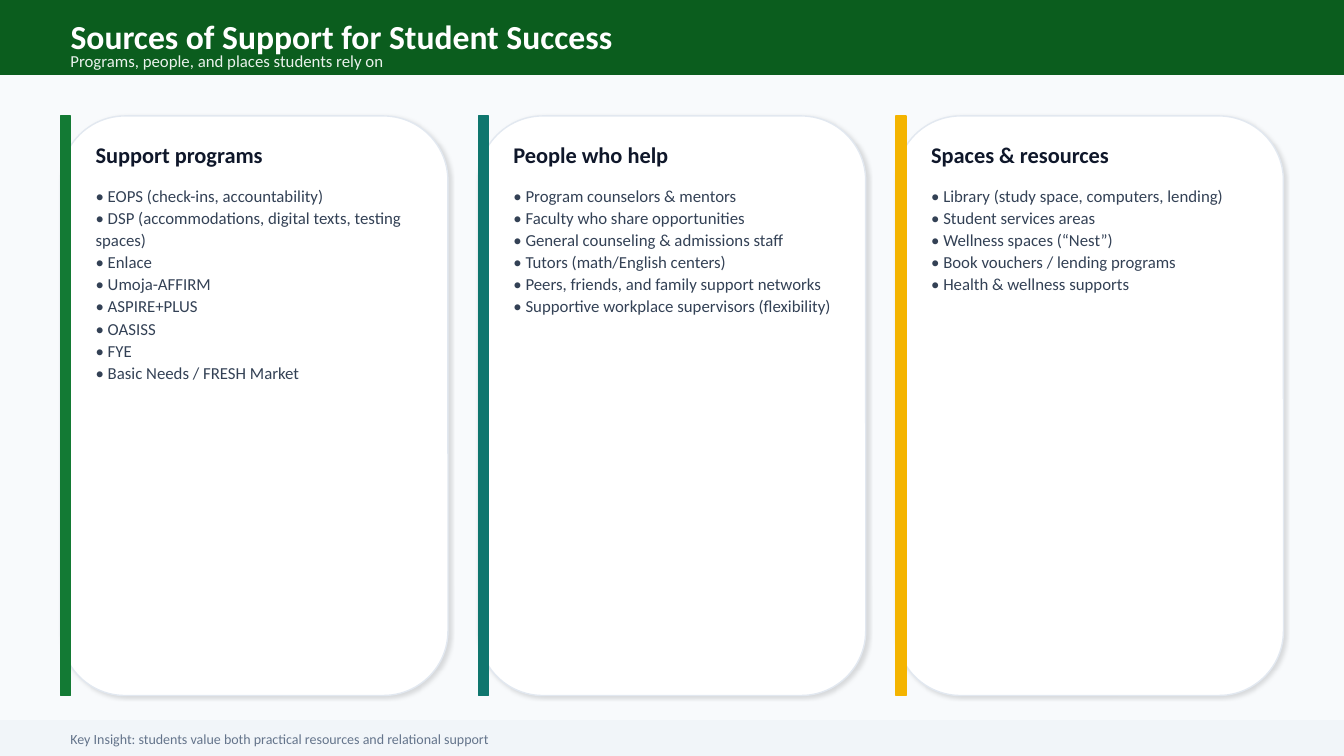
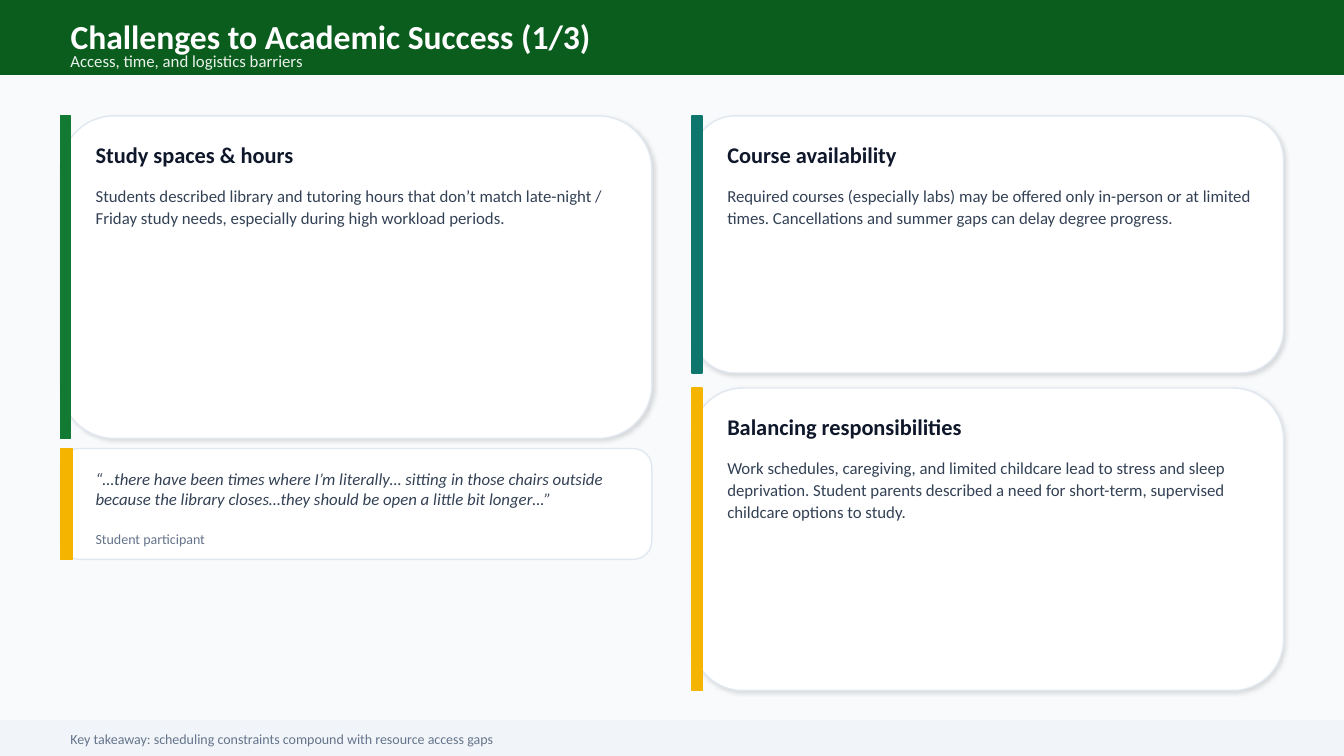
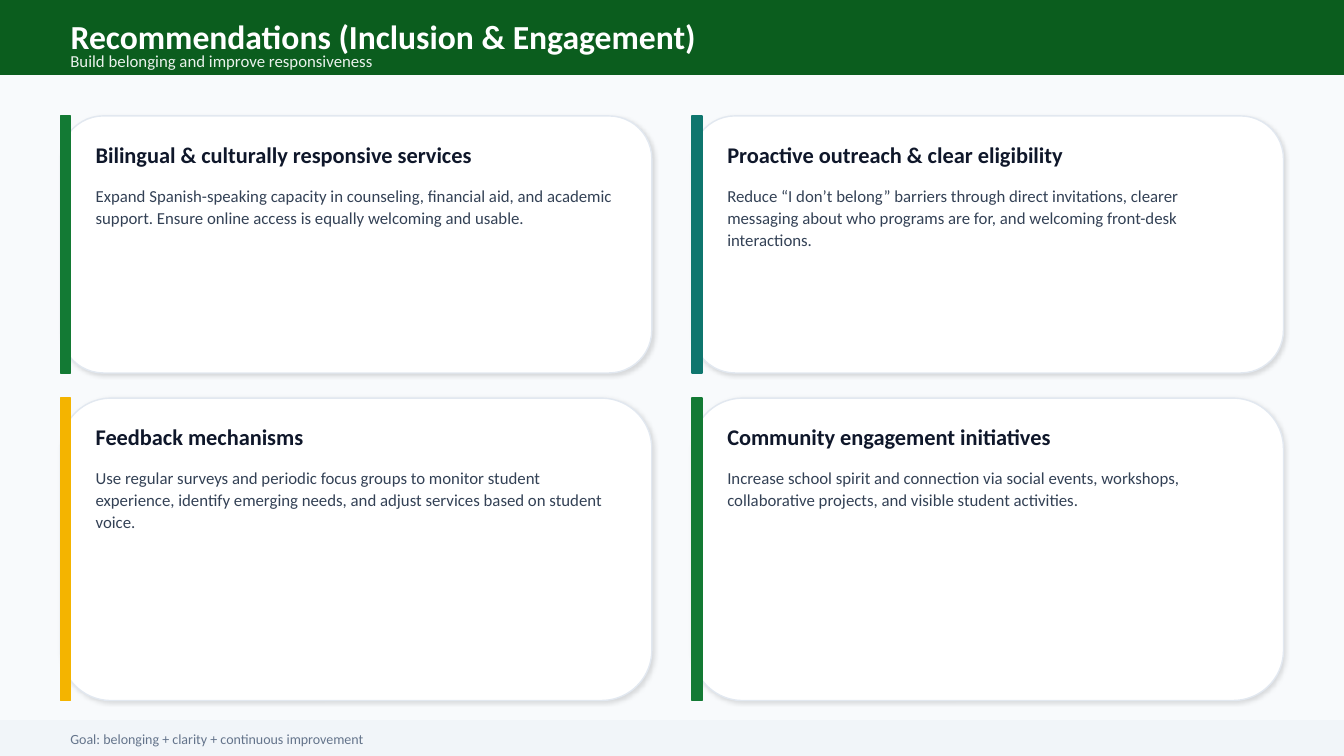
from lxml import etree
from pptx import Presentation
from pptx.dml.color import RGBColor
from pptx.enum.shapes import MSO_SHAPE as SHAPE
from pptx.enum.text import MSO_ANCHOR as ANCHOR, MSO_AUTO_SIZE as AUTO, PP_ALIGN as ALIGN
from pptx.oxml import parse_xml
from pptx.oxml.ns import nsdecls
from pptx.util import Inches, Pt

W, H, MARGIN = 13.33, 7.5, 0.6
HEADER_H, FOOTER_H, TOP = 0.75, 0.35, 1.15
GAPS = {2: 0.4, 3: 0.3}
FONT = "Calibri"
HEADER, PAGE, FOOTER = "0B5D1E", "F8FAFC", "F1F5F9"
GREEN, TEAL, GOLD = "137A34", "0F766E", "F4B400"
WHITE, BORDER, SUBTITLE = "FFFFFF", "E2E8F0", "EAF2EC"
INK, BODY, MUTED = "0F172A", "334155", "64748B"

SLIDES = [
    {
        "title": "Sources of Support for Student Success",
        "subtitle": "Programs, people, and places students rely on",
        "footer": "Key Insight: students value both practical resources and relational support",
        "columns": 3,
        "cards": [
            (0, TOP, 5.75, GREEN, "Support programs", [
                "• EOPS (check-ins, accountability)",
                "• DSP (accommodations, digital texts, testing spaces)",
                "• Enlace",
                "• Umoja-AFFIRM",
                "• ASPIRE+PLUS",
                "• OASISS",
                "• FYE",
                "• Basic Needs / FRESH Market"]),
            (1, TOP, 5.75, TEAL, "People who help", [
                "• Program counselors & mentors",
                "• Faculty who share opportunities",
                "• General counseling & admissions staff",
                "• Tutors (math/English centers)",
                "• Peers, friends, and family support networks",
                "• Supportive workplace supervisors (flexibility)"]),
            (2, TOP, 5.75, GOLD, "Spaces & resources", [
                "• Library (study space, computers, lending)",
                "• Student services areas",
                "• Wellness spaces (“Nest”)",
                "• Book vouchers / lending programs",
                "• Health & wellness supports"]),
        ],
        "quotes": [],
    },
    {
        "title": "Challenges to Academic Success (1/3)",
        "subtitle": "Access, time, and logistics barriers",
        "footer": "Key takeaway: scheduling constraints compound with resource access gaps",
        "columns": 2,
        "cards": [
            (0, TOP, 3.2, GREEN, "Study spaces & hours", [
                "Students described library and tutoring hours that don’t match late-night / "
                "Friday study needs, especially during high workload periods."]),
            (1, TOP, 2.55, TEAL, "Course availability", [
                "Required courses (especially labs) may be offered only in-person or at limited "
                "times. Cancellations and summer gaps can delay degree progress."]),
            (1, 3.85, 3, GOLD, "Balancing responsibilities", [
                "Work schedules, caregiving, and limited childcare lead to stress and sleep "
                "deprivation. Student parents described a need for short-term, supervised "
                "childcare options to study."]),
        ],
        "quotes": [
            (0, 4.45, 1.1, GOLD,
             "“…there have been times where I’m literally… sitting in those chairs outside "
             "because the library closes…they should be open a little bit longer…”",
             "Student participant"),
        ],
    },
    {
        "title": "Recommendations (Inclusion & Engagement)",
        "subtitle": "Build belonging and improve responsiveness",
        "footer": "Goal: belonging + clarity + continuous improvement",
        "columns": 2,
        "cards": [
            (0, TOP, 2.55, GREEN, "Bilingual & culturally responsive services", [
                "Expand Spanish-speaking capacity in counseling, financial aid, and academic "
                "support. Ensure online access is equally welcoming and usable."]),
            (1, TOP, 2.55, TEAL, "Proactive outreach & clear eligibility", [
                "Reduce “I don’t belong” barriers through direct invitations, clearer messaging "
                "about who programs are for, and welcoming front-desk interactions."]),
            (0, 3.95, 3, GOLD, "Feedback mechanisms", [
                "Use regular surveys and periodic focus groups to monitor student experience, "
                "identify emerging needs, and adjust services based on student voice."]),
            (1, 3.95, 3, GREEN, "Community engagement initiatives", [
                "Increase school spirit and connection via social events, workshops, "
                "collaborative projects, and visible student activities."]),
        ],
        "quotes": [],
    },
]


def rgb(color):
    return RGBColor.from_string(color)


def add_box(s, x, y, w, h, fill, line=None, kind=SHAPE.RECTANGLE):
    sp = s.shapes.add_shape(kind, Inches(x), Inches(y), Inches(w), Inches(h))
    sp.shadow.inherit = False
    sp.fill.solid()
    sp.fill.fore_color.rgb = rgb(fill)
    sp.line.color.rgb = rgb(line or fill)
    sp.line.width = Pt(1)
    return sp


def add_shadow(sp):
    effects = sp.element.spPr.find("{*}effectLst")
    effects.append(parse_xml(
        f'<a:outerShdw {nsdecls("a")} blurRad="{Pt(3)}" dist="{Pt(1.5)}" dir="2700000" '
        'algn="ctr" rotWithShape="0"><a:srgbClr val="000000">'
        '<a:alpha val="12000"/></a:srgbClr></a:outerShdw>'))


def write(sp, lines, size, color, bold=False, italic=False, anchor=ANCHOR.MIDDLE, spacing=None):
    tf = sp.text_frame
    tf.text = "\n".join(lines)
    tf.word_wrap = True
    tf.auto_size = AUTO.NONE
    tf.vertical_anchor = anchor
    for p in tf.paragraphs:
        p.alignment = ALIGN.LEFT
        if spacing:
            p.line_spacing = spacing
        for r in p.runs:
            r.font.name = FONT
            r.font.size = Pt(size)
            r.font.bold = bold
            r.font.italic = italic
            r.font.color.rgb = rgb(color)


def add_text(s, x, y, w, h, lines, size, color, **style):
    sp = s.shapes.add_textbox(Inches(x), Inches(y), Inches(w), Inches(h))
    write(sp, lines, size, color, **style)


def column(index, count):
    gap = GAPS[count]
    w = (W - 2 * MARGIN - gap * (count - 1)) / count
    return MARGIN + index * (w + gap), w


def add_frame(s, title, subtitle, footer):
    add_box(s, 0, 0, W, HEADER_H, HEADER)
    add_box(s, 0, HEADER_H, W, H - HEADER_H - FOOTER_H, PAGE)
    add_box(s, 0, H - FOOTER_H, W, FOOTER_H, FOOTER)
    sp = s.shapes.title
    s.shapes.element.append(sp.element)
    sp.left, sp.top = Inches(MARGIN), Inches(0.16)
    sp.width, sp.height = Inches(W - 2 * MARGIN), Inches(0.4)
    write(sp, [title], 24, WHITE, bold=True)
    add_text(s, MARGIN, 0.49, W - 2 * MARGIN, 0.22, [subtitle], 12, SUBTITLE)
    add_text(s, MARGIN, 7.22, W / 2, 0.22, [footer], 10, MUTED)


def add_card(s, count, index, y, h, accent, heading, lines):
    x, w = column(index, count)
    add_shadow(add_box(s, x, y, w, h, WHITE, BORDER, SHAPE.ROUNDED_RECTANGLE))
    add_box(s, x, y, 0.1, h, accent)
    add_text(s, x + 0.25, y + 0.18, w - 0.45, 0.4, [heading], 16, INK, bold=True)
    add_text(s, x + 0.25, y + 0.62, w - 0.45, h - 0.8, lines, 12, BODY,
             anchor=ANCHOR.TOP, spacing=1.1)


def add_quote(s, count, index, y, h, accent, quote, speaker):
    x, w = column(index, count)
    add_box(s, x, y, w, h, WHITE, BORDER, SHAPE.ROUNDED_RECTANGLE)
    add_box(s, x, y, 0.12, h, accent)
    add_text(s, x + 0.25, y + 0.15, w - 0.45, h - 0.45, [quote], 12, BODY,
             italic=True, anchor=ANCHOR.TOP)
    add_text(s, x + 0.25, y + h - 0.33, w - 0.45, 0.25, [speaker], 10, MUTED)


def main():
    prs = Presentation()
    prs.slide_width, prs.slide_height = Inches(W), Inches(H)
    for content in SLIDES:
        s = prs.slides.add_slide(prs.slide_layouts[5])
        add_frame(s, content["title"], content["subtitle"], content["footer"])
        for card in content["cards"]:
            add_card(s, content["columns"], *card)
        for quote in content["quotes"]:
            add_quote(s, content["columns"], *quote)
    prs.save("out.pptx")


if __name__ == "__main__":
    main()
